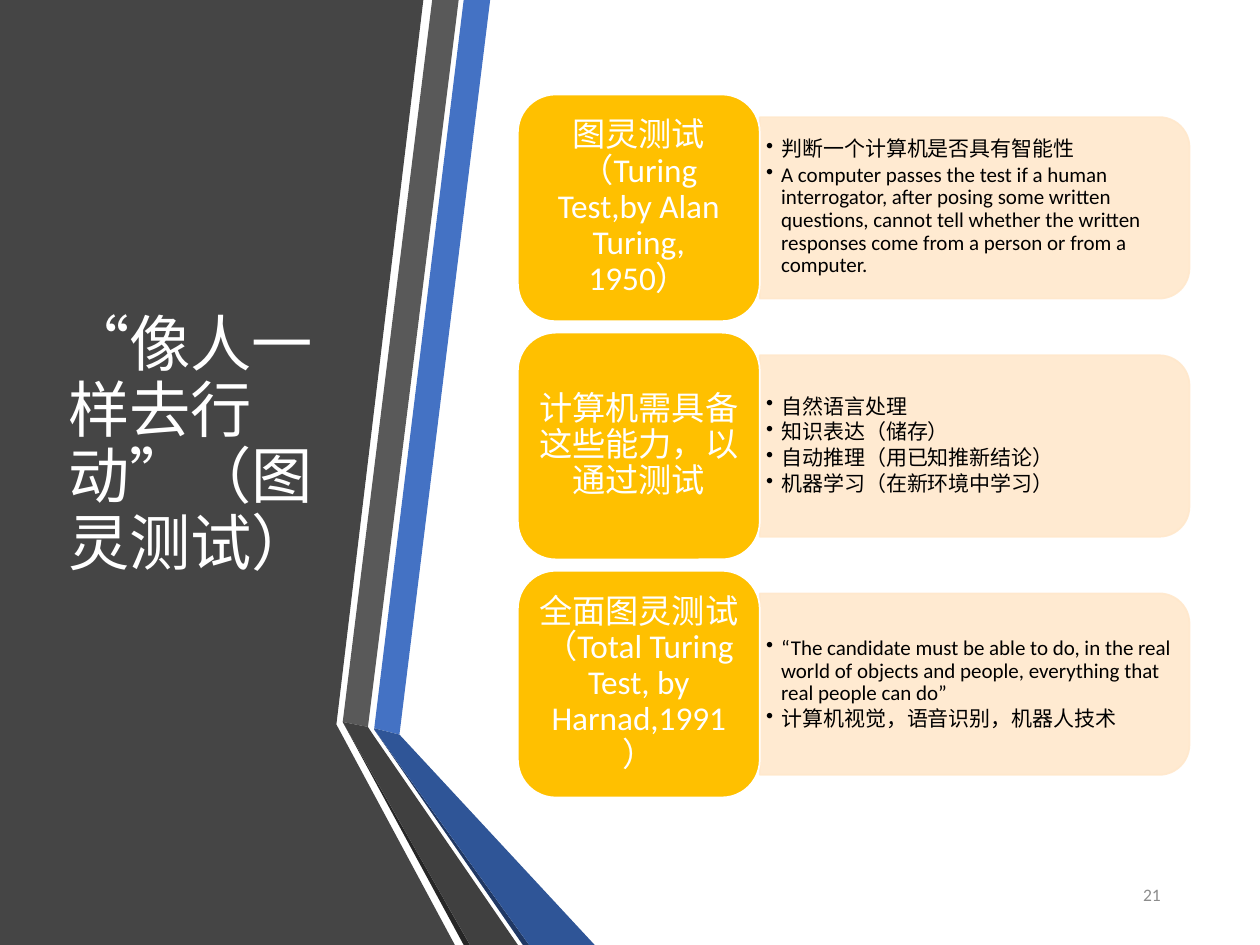
import pptx
import pptx.dml.color
import pptx.enum.shapes
import pptx.enum.text
import pptx.oxml
import pptx.oxml.ns
import pptx.util
from pptx.util import Inches

RGBColor = pptx.dml.color.RGBColor
Shape = pptx.enum.shapes.MSO_SHAPE
Align = pptx.enum.text.PP_ALIGN

WHITE = RGBColor(0xFF, 0xFF, 0xFF)
BLACK = RGBColor(0x00, 0x00, 0x00)
PANEL = RGBColor(0x45, 0x45, 0x45)
BLUE = RGBColor(0x44, 0x72, 0xC4)
BLUE_DARK = RGBColor(0x2F, 0x55, 0x97)
BLUE_DEEP = RGBColor(0x20, 0x38, 0x64)
GRAY = RGBColor(0x59, 0x59, 0x59)
GRAY_DARK = RGBColor(0x40, 0x40, 0x40)
GRAY_DEEP = RGBColor(0x26, 0x26, 0x26)
GOLD = RGBColor(0xFF, 0xC0, 0x00)
CREAM = RGBColor(0xFF, 0xE8, 0xCC)
NUMBER_GRAY = RGBColor(0x8C, 0x8C, 0x8C)

BANDS = [
    (PANEL, [(0, 0), (2.64, 0), (3.36, 0), (2.67, 5.75), (3.61, 7.5), (0, 7.5)]),
    (BLUE, [(2.97, 5.78), (3.17, 5.83), (3.89, 0), (3.68, 0)]),
    (GRAY, [(3.64, 0), (3.43, 0), (2.72, 5.73), (2.92, 5.77)]),
    (GRAY_DEEP, [(2.72, 5.73), (3.68, 7.5), (3.73, 7.5)]),
    (BLUE_DEEP, [(2.97, 5.79), (4.15, 7.5), (4.2, 7.5)]),
    (BLUE_DARK, [(2.97, 5.79), (4.2, 7.5), (4.72, 7.5), (3.17, 5.83), (2.97, 5.78)]),
    (GRAY_DARK, [(4.11, 7.5), (2.96, 5.83), (2.92, 5.77), (2.72, 5.73), (3.73, 7.5)]),
]

TOPICS = [
    ("图灵测试（Turing Test,by Alan Turing, 1950）", [
        "判断一个计算机是否具有智能性",
        "A computer passes the test if a human interrogator, after posing some written "
        "questions, cannot tell whether the written responses come from a person or "
        "from a computer.",
    ]),
    ("计算机需具备这些能力，以通过测试", [
        "自然语言处理",
        "知识表达（储存）",
        "自动推理（用已知推新结论）",
        "机器学习（在新环境中学习）",
    ]),
    ("全面图灵测试（Total Turing Test, by Harnad,1991）", [
        "“The candidate must be able to do, in the real world of objects and people, "
        "everything that real people can do”",
        "计算机视觉，语音识别，机器人技术",
    ]),
]


def set_frame(frame, side=0.1, edge=0.05):
    """Wrap and centre the text vertically within the given insets."""
    frame.word_wrap = True
    frame.auto_size = pptx.enum.text.MSO_AUTO_SIZE.NONE
    frame.vertical_anchor = pptx.enum.text.MSO_ANCHOR.MIDDLE
    frame.margin_left = frame.margin_right = Inches(side)
    frame.margin_top = frame.margin_bottom = Inches(edge)


def write(para, text, size, color, align, spacing=0.9):
    """Add one formatted run to a paragraph."""
    para.alignment = align
    para.line_spacing = spacing
    span = para.add_run()
    span.text = text
    span.font.name = "Calibri"
    span.font.size = pptx.util.Pt(size)
    span.font.color.rgb = color


def paint(shape, fill, line=None):
    """Fill a shape and give it a thin outline or none."""
    shape.shadow.inherit = False
    shape.fill.solid()
    shape.fill.fore_color.rgb = fill
    if line is None:
        shape.line.fill.background()
    else:
        shape.line.color.rgb = line
        shape.line.width = pptx.util.Pt(1)


def add_bands(page):
    """Draw the dark panel and the folded ribbons beside it."""
    for color, points in BANDS:
        corners = [(Inches(x), Inches(y)) for x, y in points]
        builder = page.shapes.build_freeform(*corners[0])
        builder.add_line_segments(corners[1:], close=True)
        paint(builder.convert_to_shape(), color)


def add_title(page, left, top, width, height):
    """Place the title placeholder in front of the panel."""
    title = page.shapes.title
    title.left, title.top, title.width, title.height = map(
        Inches, (left, top, width, height))
    title._element.getparent().append(title._element)
    set_frame(title.text_frame)
    write(title.text_frame.paragraphs[0], "“像人一样去行动”（图灵测试）", 35, WHITE, Align.LEFT)


def add_bar(page, left, top, width, height):
    """Draw a translucent bar whose right corners are rounded."""
    bar = page.shapes.add_shape(
        Shape.ROUND_2_SAME_RECTANGLE,
        Inches(left + (width - height) / 2), Inches(top + (height - width) / 2),
        Inches(height), Inches(width))
    bar.rotation = 90
    paint(bar, CREAM, CREAM)
    for color in bar._element.spPr.iter(pptx.oxml.ns.qn("a:srgbClr")):
        pptx.oxml.ns.qn("a:alpha")
        alpha = color.makeelement(pptx.oxml.ns.qn("a:alpha"), {"val": "90000"})
        color.append(alpha)


def add_bullets(page, items, left, top, width, height):
    """Write a bulleted list in a text box."""
    box = page.shapes.add_textbox(*map(Inches, (left, top, width, height)))
    frame = box.text_frame
    set_frame(frame, 0.05, 0.03)
    for index, item in enumerate(items):
        para = frame.add_paragraph() if index else frame.paragraphs[0]
        write(para, item, 12, BLACK, Align.LEFT)
        para.space_after = pptx.util.Pt(1.8)
        properties = para._p.get_or_add_pPr()
        properties.set("marL", str(Inches(0.12)))
        properties.set("indent", str(-Inches(0.12)))
        bullet = properties.makeelement(pptx.oxml.ns.qn("a:buChar"), {"char": "•"})
        properties.append(bullet)


def add_topic(page, label, items, left, top, width, height):
    """Place a gold label with its bulleted bar to the right."""
    label_width = 1.92
    bar_left, bar_width = left + label_width, width - label_width
    add_bar(page, bar_left, top + height * 0.1, bar_width, height * 0.8)
    add_bullets(page, items, bar_left, top + 0.25, bar_width - 0.07, height - 0.5)
    block = page.shapes.add_shape(
        Shape.ROUNDED_RECTANGLE, *map(Inches, (left, top, label_width, height)))
    paint(block, GOLD, WHITE)
    set_frame(block.text_frame, 0.08, 0.04)
    write(block.text_frame.paragraphs[0], label, 19, WHITE, Align.CENTER)


def add_topics(page, left, top, width, height):
    """Stack the topics with equal gaps."""
    gap = 0.09
    row = (height - gap * (len(TOPICS) - 1)) / len(TOPICS)
    for index, (label, items) in enumerate(TOPICS):
        add_topic(page, label, items, left, top + index * (row + gap), width, row)


def add_page_number(page, left, top, width, height):
    """Write the page number at the lower right."""
    box = page.shapes.add_textbox(*map(Inches, (left, top, width, height)))
    set_frame(box.text_frame)
    para = box.text_frame.paragraphs[0]
    write(para, "21", 10, NUMBER_GRAY, Align.RIGHT, 1.0)
    para.space_after = pptx.util.Pt(6)


def main():
    """Build the slide and save the deck."""
    deck = pptx.Presentation()
    deck.slide_width, deck.slide_height = Inches(10), Inches(7.5)
    page = deck.slides.add_slide(deck.slide_layouts[5])
    add_bands(page)
    add_title(page, 0.44, 0.75, 2.28, 5.58)
    add_page_number(page, 8.42, 6.9, 0.89, 0.4)
    add_topics(page, 4.11, 0.75, 5.33, 5.58)
    deck.save("out.pptx")


if __name__ == "__main__":
    main()
